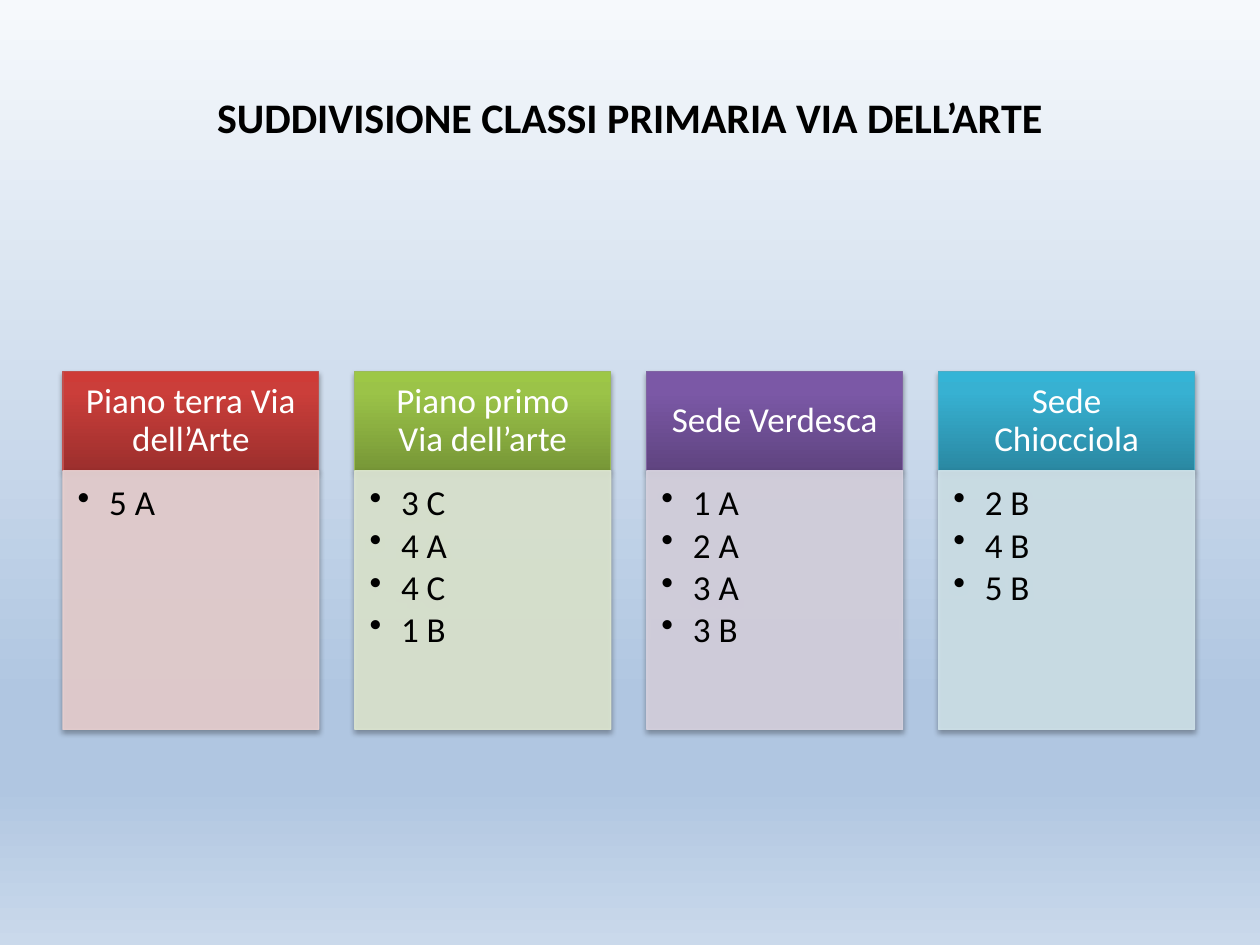
from lxml import etree
from pptx import Presentation
from pptx.dml.color import RGBColor
from pptx.enum.shapes import MSO_SHAPE
from pptx.enum.text import MSO_ANCHOR, PP_ALIGN
from pptx.oxml.ns import qn
from pptx.util import Pt

RECTANGLE = MSO_SHAPE.RECTANGLE
TOP, MIDDLE = MSO_ANCHOR.TOP, MSO_ANCHOR.MIDDLE
LEFT, CENTER = PP_ALIGN.LEFT, PP_ALIGN.CENTER

COLORS = {
    "text": "000000",
    "header text": "FFFFFF",
    "shadow": "000000",
    "red": "C0504D",
    "green": "9BBB59",
    "purple": "8064A2",
    "teal": "4BACC6",
    "red body": "E8D0D0",
    "green body": "DEE7D1",
    "purple body": "D8D3E0",
    "teal body": "D0E3EA",
}
HEADER_GRADIENTS = {
    "red": [(0, "9C2F2D"), (80, "CB3E3A"), (100, "CE3B37")],
    "green": [(0, "779737"), (80, "9BC348"), (100, "9DC746")],
    "purple": [(0, "5F4480"), (80, "7B58A6"), (100, "7C57A8")],
    "teal": [(0, "2A88A2"), (80, "37B1D2"), (100, "34B4D6")],
}
BACKGROUND_GRADIENT = [(0, "F6F9FC"), (74, "B0C6E1"), (83, "B0C6E1"), (100, "CAD9EB")]

TITLE = "SUDDIVISIONE CLASSI PRIMARIA VIA DELL’ARTE"
COLUMNS = [
    ("red", "Piano terra Via dell’Arte", ["5 A"]),
    ("green", "Piano primo Via dell’arte", ["3 C", "4 A", "4 C", "1 B"]),
    ("purple", "Sede Verdesca", ["1 A", "2 A", "3 A", "3 B"]),
    ("teal", "Sede Chiocciola", ["2 B", "4 B", "5 B"]),
]

COLUMN_LEFT, COLUMN_PITCH, COLUMN_WIDTH = 36, 166.8, 146.2
HEADER_TOP, HEADER_HEIGHT, BODY_HEIGHT = 212.4, 56.6, 147.8


def add_node(parent, tag, **attributes):
    values = {name: str(value) for name, value in attributes.items()}
    return etree.SubElement(parent, qn(tag), values)


def set_attributes(target, formats):
    for name, value in formats.items():
        setattr(target, name, value)


class SlideBuilder:
    font = "Calibri"

    def __init__(self, deck):
        self.slide = deck.slides.add_slide(deck.slide_layouts[6])

    def gradient(self, fill, owner, stops, angle):
        fill.gradient()
        fill.gradient_angle = angle
        stop_list = owner.find(".//" + qn("a:gsLst"))
        stop_list.clear()
        for position, color in stops:
            stop = add_node(stop_list, "a:gs", pos=position * 1000)
            add_node(stop, "a:srgbClr", val=color)

    def background(self, stops):
        self.gradient(self.slide.background.fill, self.slide.element, stops, 270)

    def shadow(self, box):
        box.shadow.inherit = False
        effects = box.element.spPr.find(qn("a:effectLst"))
        outer = add_node(effects, "a:outerShdw", blurRad=Pt(3.1), dist=Pt(1.8),
                         dir=5400000, rotWithShape=0)
        color = add_node(outer, "a:srgbClr", val=COLORS["shadow"])
        add_node(color, "a:alpha", val=35000)

    def text(self, box, lines, color, size, anchor, align, margins, bold=False, **spacing):
        frame = box.text_frame
        sides = ("margin_left", "margin_top", "margin_right", "margin_bottom")
        formats = dict(zip(sides, map(Pt, margins)))
        set_attributes(frame, {"word_wrap": True, "vertical_anchor": anchor, **formats})
        for index, line in enumerate(lines):
            para = frame.add_paragraph() if index else frame.paragraphs[0]
            set_attributes(para, {"alignment": align, **spacing})
            span = para.add_run()
            span.text = line
            set_attributes(span.font, {"name": self.font, "size": Pt(size), "bold": bold})
            span.font.color.rgb = RGBColor.from_string(COLORS[color])
        return frame.paragraphs

    def title(self, text):
        box = self.slide.shapes.add_textbox(Pt(36), Pt(21.6), Pt(648), Pt(90))
        self.text(box, [text], "text", 24, MIDDLE, CENTER, (7.2, 3.6, 7.2, 3.6), bold=True)

    def rectangle(self, left, top, height, line_color):
        box = self.slide.shapes.add_shape(
            RECTANGLE, Pt(left), Pt(top), Pt(COLUMN_WIDTH), Pt(height))
        box.line.color.rgb = RGBColor.from_string(COLORS[line_color])
        box.line.width = Pt(0.75)
        return box

    def header(self, left, color, text):
        box = self.rectangle(left, HEADER_TOP, HEADER_HEIGHT, color)
        self.gradient(box.fill, box.element, HEADER_GRADIENTS[color], 90)
        self.shadow(box)
        self.text(box, [text], "header text", 20, MIDDLE, CENTER,
                  (11.2, 6.4, 11.2, 6.4), line_spacing=0.9)

    def body(self, left, color, classes):
        box = self.rectangle(left, HEADER_TOP + HEADER_HEIGHT, BODY_HEIGHT, color)
        box.fill.solid()
        box.fill.fore_color.rgb = RGBColor.from_string(COLORS[color])
        for paint in box.element.spPr.iter(qn("a:srgbClr")):
            add_node(paint, "a:alpha", val=90000)
        self.shadow(box)
        paras = self.text(box, classes, "text", 20, TOP, LEFT, (8.4, 8.4, 11.2, 12.6),
                          level=1, line_spacing=0.9, space_after=Pt(2.6))
        for para in paras:
            properties = para._p.get_or_add_pPr()
            properties.set("marL", str(Pt(18)))
            properties.set("indent", str(Pt(-18)))
            add_node(properties, "a:buChar", char="•")


def main():
    deck = Presentation()
    set_attributes(deck, {"slide_width": Pt(720), "slide_height": Pt(540)})
    builder = SlideBuilder(deck)
    builder.background(BACKGROUND_GRADIENT)
    builder.title(TITLE)
    for index, (color, place, classes) in enumerate(COLUMNS):
        left = COLUMN_LEFT + index * COLUMN_PITCH
        builder.header(left, color, place)
        builder.body(left, f"{color} body", classes)
    deck.save("out.pptx")


if __name__ == "__main__":
    main()
